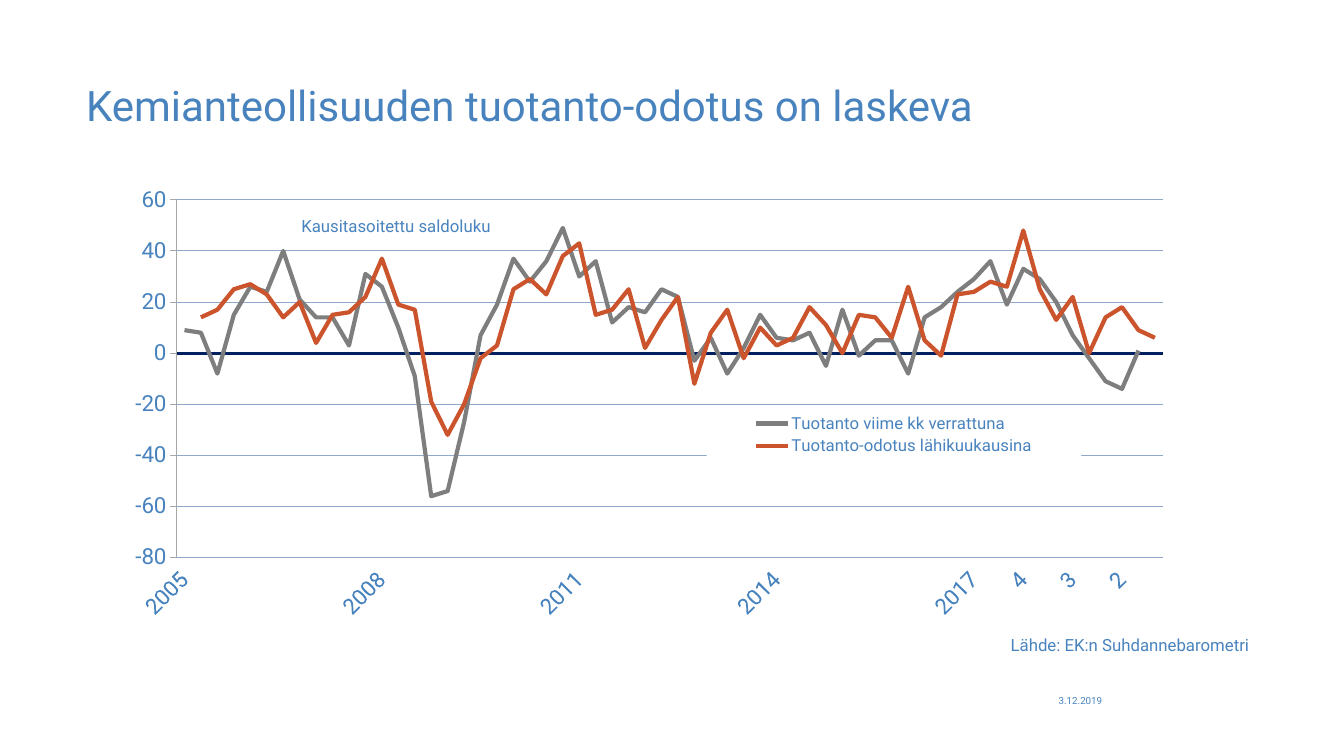
from lxml.etree import SubElement
from pptx import Presentation
from pptx.chart.data import CategoryChartData
from pptx.dml.color import RGBColor
from pptx.enum.chart import XL_CHART_TYPE, XL_LEGEND_POSITION, XL_TICK_LABEL_POSITION, XL_TICK_MARK
from pptx.enum.text import MSO_ANCHOR, PP_ALIGN
from pptx.oxml import parse_xml
from pptx.oxml.ns import nsdecls, qn
from pptx.util import Emu, Pt

PX = 9525  # EMU per px, 1280 x 720 slide
FONT = "Roboto"
COLORS = {"text": "4883BE", "zero": "002060", "grid": "8FA8CC", "axis": "A6A6A6",
          "past": "7E7E7E", "outlook": "CC542C"}

# Quarterly balance figures, 2005 to 2019
PAST = [9, 8, -8, 15, 26, 24, 40, 21, 14, 14, 3, 31, 26, 10, -9, -56, -54, -27, 7, 19,
        37, 28, 36, 49, 30, 36, 12, 18, 16, 25, 22, -3, 6, -8, 2, 15, 6, 5, 8, -5,
        17, -1, 5, 5, -8, 14, 18, 24, 29, 36, 19, 33, 29, 20, 7, -2, -11, -14, 1, None]
OUTLOOK = [None, 14, 17, 25, 27, 23, 14, 20, 4, 15, 16, 22, 37, 19, 17, -19, -32, -20, -2, 3,
           25, 29, 23, 38, 43, 15, 17, 25, 2, 13, 22, -12, 8, 17, -2, 10, 3, 6, 18, 11,
           0, 15, 14, 6, 26, 5, -1, 23, 24, 28, 26, 48, 25, 13, 22, 0, 14, 18, 9, 6]
SERIES = [("Tuotanto viime kk verrattuna", PAST, "past"),
          ("Tuotanto-odotus lähikuukausina", OUTLOOK, "outlook")]


def rgb(name):
    return RGBColor.from_string(COLORS[name])


def box(*px):
    return [Emu(v * PX) for v in px]


def style_font(font, size):
    font.name, font.size = FONT, Pt(size)
    font.color.rgb = rgb("text")


def style_line(line, color, width):
    line.color.rgb = rgb(color)
    line.width = Pt(width)


def fill_text(sp, text, size, align, anchor=MSO_ANCHOR.TOP, insets=(0, 0, 0, 0), wrap=True):
    tf = sp.text_frame
    tf.word_wrap, tf.vertical_anchor = wrap, anchor
    tf.margin_left, tf.margin_top, tf.margin_right, tf.margin_bottom = box(*insets)
    p = tf.paragraphs[0]
    p.text, p.alignment = text, align
    style_font(p.font, size)


def add_title(s, text):
    sp = s.shapes.title
    sp.left, sp.top, sp.width, sp.height = box(82, 76, 1114, 94)
    fill_text(sp, text, 30, PP_ALIGN.LEFT, insets=(0, 0, 4, 0))


def add_text(s, place, text, size, align, **options):
    fill_text(s.shapes.add_textbox(*box(*place)), text, size, align, **options)


def manual_layout(x, y, w, h, inner=False):
    layout = parse_xml(f"<c:layout {nsdecls('c')}><c:manualLayout/></c:layout>")
    values = [("layoutTarget", "inner")] if inner else []
    values += [("xMode", "edge"), ("yMode", "edge"), ("x", x), ("y", y), ("w", w), ("h", h)]
    for tag, val in values:
        SubElement(layout[0], qn(f"c:{tag}")).set("val", str(val))
    return layout


def quarter_labels():
    labels = []
    for year in range(2005, 2020):
        labels += [str(year)] + (["2", "3", "4"] if year >= 2017 else [""] * 3)
    return labels


def style_axes(chart):
    cat = chart.category_axis
    cat.tick_label_position = XL_TICK_LABEL_POSITION.LOW
    cat.major_tick_mark = XL_TICK_MARK.NONE
    style_line(cat.format.line, "zero", 2)
    style_font(cat.tick_labels.font, 16)
    # Slanted labels, one for every third quarter
    cat._element.find(qn("c:txPr")).find(qn("a:bodyPr")).set("rot", "-2700000")
    skip = parse_xml(f'<c:tickLblSkip {nsdecls("c")} val="3"/>')
    cat._element.find(qn("c:noMultiLvlLbl")).addprevious(skip)

    val = chart.value_axis
    val.minimum_scale, val.maximum_scale, val.major_unit = -80, 60, 20
    val.major_tick_mark = XL_TICK_MARK.OUTSIDE
    val.has_major_gridlines = True
    style_line(val.major_gridlines.format.line, "grid", 0.75)
    style_line(val.format.line, "axis", 0.75)
    style_font(val.tick_labels.font, 16)


def style_legend(chart):
    chart.has_legend = True
    legend = chart.legend
    legend.position = XL_LEGEND_POSITION.RIGHT
    legend.include_in_layout = False
    style_font(legend.font, 12)
    overlay = legend._element.find(qn("c:overlay"))
    overlay.addprevious(manual_layout(0.53, 0.53, 0.32, 0.11))
    overlay.addnext(parse_xml(
        f'<c:spPr {nsdecls("c", "a")}><a:solidFill><a:srgbClr val="FFFFFF"/></a:solidFill>'
        "<a:ln><a:noFill/></a:ln></c:spPr>"))


def add_balance_chart(s):
    data = CategoryChartData()
    data.categories = quarter_labels()
    for name, values, _ in SERIES:
        data.add_series(name, values)
    frame = s.shapes.add_chart(XL_CHART_TYPE.LINE, *box(82, 174, 1115, 416), data)
    chart = frame.chart
    chart.has_title = False
    style_font(chart.font, 16)
    plot = chart.plots[0]
    plot.vary_by_categories = False
    for series, (_, _, color) in zip(plot.series, SERIES):
        series.smooth = False
        style_line(series.format.line, color, 3)
    style_axes(chart)
    style_legend(chart)
    # Fixed plot area
    area = plot._element.getparent()
    for old in area.findall(qn("c:layout")):
        area.remove(old)
    area.insert(0, manual_layout(0.077, 0.04, 0.843, 0.83, inner=True))


def main():
    prs = Presentation()
    prs.slide_width, prs.slide_height = box(1280, 720)
    s = prs.slides.add_slide(prs.slide_layouts[5])
    add_balance_chart(s)
    add_title(s, "Kemianteollisuuden tuotanto-odotus on laskeva")
    # Source, date and chart caption
    add_text(s, (670, 596, 524, 36), "Lähde: EK:n Suhdannebarometri", 12, PP_ALIGN.RIGHT,
             anchor=MSO_ANCHOR.MIDDLE, insets=(0, 2, 4, 2))
    add_text(s, (988, 662, 82, 19), "3.12.2019", 7, PP_ALIGN.CENTER)
    add_text(s, (277, 200, 201, 29), "Kausitasoitettu saldoluku", 12, PP_ALIGN.LEFT,
             insets=(10, 5, 10, 5), wrap=False)
    prs.save("out.pptx")


if __name__ == "__main__":
    main()
